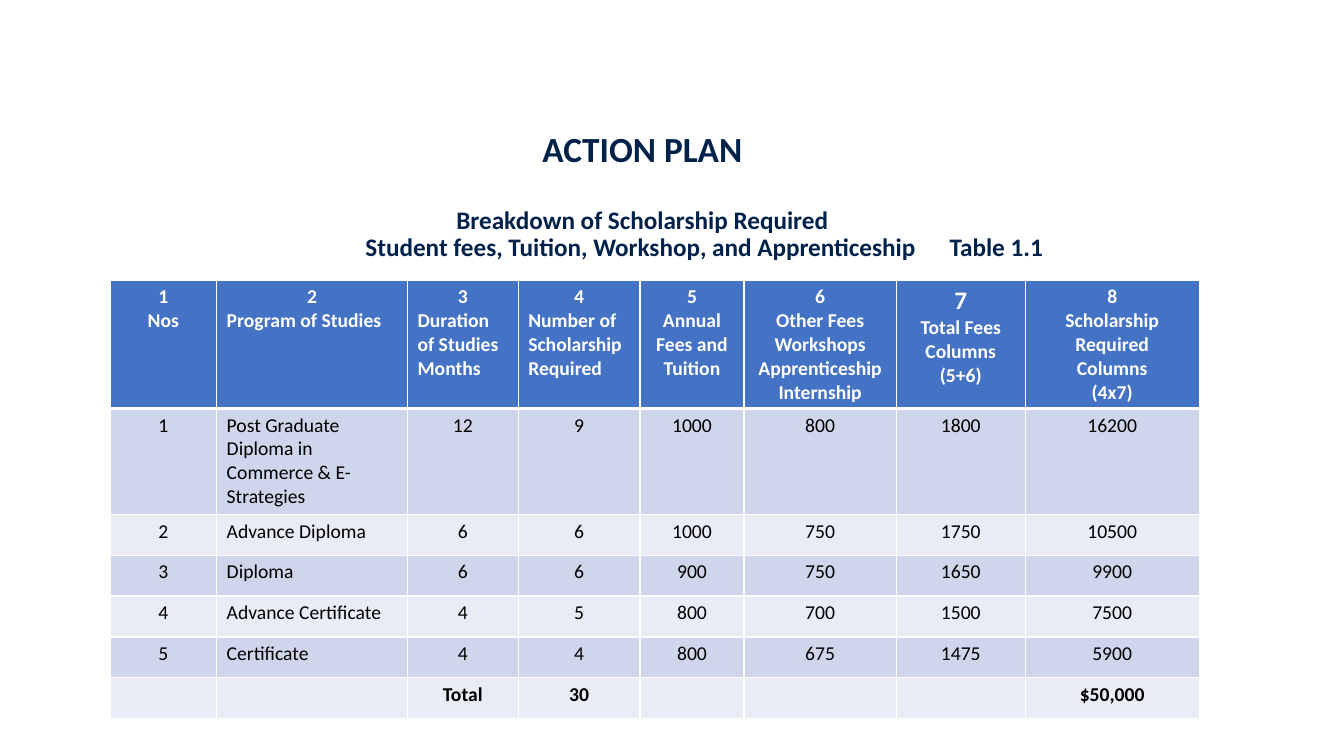
from lxml import etree
from pptx import Presentation
from pptx.dml.color import RGBColor
from pptx.enum.text import MSO_ANCHOR, PP_ALIGN
from pptx.oxml.ns import qn
from pptx.util import Cm, Pt

FONT = "Calibri"
NAVY, WHITE, BLACK = "00214A", "FFFFFF", "000000"
HEADER_FILL, BANDS = "4472C4", ("CFD5EA", "E9EBF5")

COLUMN_WIDTHS = (2.69, 4.81, 2.79, 3.07, 2.62, 3.84, 3.25, 4.38)
ROW_HEIGHTS = (3.23, 2.67) + (1.03,) * 5
PROGRAM_COLUMN = 1
LEFT_HEADERS = (1, 2, 3)

HEADERS = (
    "Nos",
    "Program of Studies",
    "Duration of Studies\nMonths",
    "Number of Scholarship Required",
    "Annual\nFees and\nTuition",
    "Other Fees Workshops Apprenticeship Internship",
    "Total Fees\nColumns\n(5+6)",
    "Scholarship Required\nColumns\n(4x7)",
)
PROGRAMS = (
    ("1", "Post Graduate Diploma in Commerce & E-Strategies",
     "12", "9", "1000", "800", "1800", "16200"),
    ("2", "Advance Diploma", "6", "6", "1000", "750", "1750", "10500"),
    ("3", "Diploma", "6", "6", "900", "750", "1650", "9900"),
    ("4", "Advance Certificate", "4", "5", "800", "700", "1500", "7500"),
    ("5", "Certificate", "4", "4", "800", "675", "1475", "5900"),
)
TOTALS = ("", "", "Total", "30", "", "", "", "$50,000")


def color(hex_value):
    return RGBColor.from_string(hex_value)


def write(tf, text, first=False, size=14, fill=BLACK, bold=False,
          align=PP_ALIGN.CENTER, spacing=None, before=None, tabs=()):
    """Add one paragraph; first reuses the paragraph already in the frame."""
    p = tf.paragraphs[0] if first else tf.add_paragraph()
    p.alignment = align
    if spacing:
        p.line_spacing = spacing
    if before:
        p.space_before = Pt(before)
    if tabs:
        tab_list = etree.SubElement(p._p.get_or_add_pPr(), qn("a:tabLst"))
        for position in tabs:
            etree.SubElement(tab_list, qn("a:tab"), pos=str(Cm(position)), algn="l")
    r = p.add_run()
    r.text = text
    r.font.name, r.font.size, r.font.bold = FONT, Pt(size), bold
    r.font.color.rgb = color(fill)


def add_title(slide):
    sp = slide.shapes.add_textbox(Cm(1.19), Cm(4.17), Cm(30), Cm(1.6))
    tf = sp.text_frame
    tf.word_wrap = True
    tf.vertical_anchor = MSO_ANCHOR.MIDDLE
    style = dict(fill=NAVY, bold=True, spacing=0.9)
    write(tf, "ACTION PLAN", first=True, size=25.2, **style)
    write(tf, "Breakdown of Scholarship Required", size=18, before=27, **style)
    write(tf, "\tStudent fees, Tuition, Workshop, and Apprenticeship\tTable 1.1",
          size=18, align=PP_ALIGN.LEFT, tabs=(7.77, 22.49), **style)


def style_cell(cell, fill, top=1, bottom=1):
    """White borders with widths in points, then the cell fill."""
    tcPr = cell._tc.get_or_add_tcPr()
    for side, width in (("L", 1), ("R", 1), ("T", top), ("B", bottom)):
        ln = etree.SubElement(tcPr, qn(f"a:ln{side}"), w=str(Pt(width)))
        solid = etree.SubElement(ln, qn("a:solidFill"))
        etree.SubElement(solid, qn("a:srgbClr"), val=WHITE)
    cell.fill.solid()
    cell.fill.fore_color.rgb = color(fill)


def fill_header(table):
    for i, label in enumerate(HEADERS):
        cell = table.cell(0, i)
        style_cell(cell, HEADER_FILL, bottom=3)
        number = i + 1
        write(cell.text_frame, str(number), first=True, fill=WHITE, bold=True,
              size=18 if number == 7 else 14)
        align = PP_ALIGN.LEFT if i in LEFT_HEADERS else PP_ALIGN.CENTER
        for line in label.split("\n"):
            write(cell.text_frame, line, fill=WHITE, bold=True, align=align)


def fill_body(table):
    for row, values in enumerate(PROGRAMS + (TOTALS,), start=1):
        for i, value in enumerate(values):
            cell = table.cell(row, i)
            style_cell(cell, BANDS[(row - 1) % 2], top=3 if row == 1 else 1)
            if value:
                align = PP_ALIGN.LEFT if i == PROGRAM_COLUMN else PP_ALIGN.CENTER
                write(cell.text_frame, value, first=True, align=align,
                      bold=values is TOTALS)


def add_scholarship_table(slide):
    frame = slide.shapes.add_table(
        len(ROW_HEIGHTS), len(COLUMN_WIDTHS), Cm(2.77), Cm(7.06),
        Cm(sum(COLUMN_WIDTHS)), Cm(sum(ROW_HEIGHTS)))
    table = frame.table
    for column, width in zip(table.columns, COLUMN_WIDTHS):
        column.width = Cm(width)
    for row, height in zip(table.rows, ROW_HEIGHTS):
        row.height = Cm(height)
    fill_header(table)
    fill_body(table)


def main():
    prs = Presentation()
    prs.slide_width, prs.slide_height = Cm(33.87), Cm(19.05)
    slide = prs.slides.add_slide(prs.slide_layouts[6])

    # Heading and table caption
    add_title(slide)

    # Scholarship breakdown
    add_scholarship_table(slide)

    prs.save("out.pptx")


if __name__ == "__main__":
    main()
